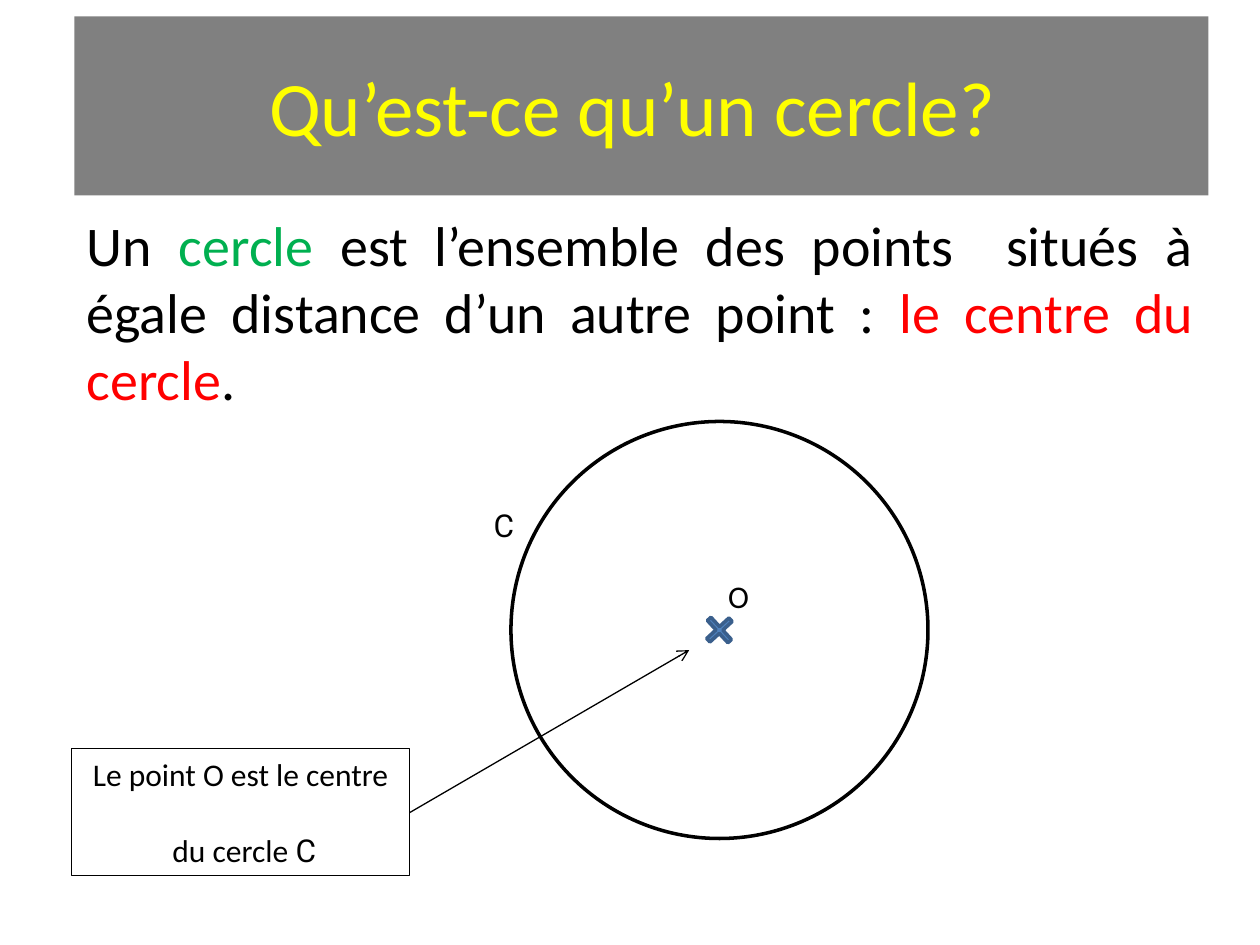
from lxml.etree import SubElement as Sub
from pptx import Presentation
from pptx.dml.color import RGBColor as RGB
from pptx.enum.shapes import MSO_CONNECTOR as Link, MSO_SHAPE as Kind
from pptx.enum.text import MSO_ANCHOR as Anchor, MSO_AUTO_SIZE as Fit, PP_ALIGN as Align
from pptx.oxml.ns import qn
from pptx.util import Inches, Pt

HUES = {"black": "000000", "grey": "808080", "yellow": "FFFF00", "green": "00B050",
        "red": "FF0000", "blue": "4F81BD", "navy": "3A5F8C"}


def hue(name):
    return RGB.from_string(HUES[name])


class Board:
    """Holds the text style and the current slide, and draws on it."""

    font = "Calibri"

    def __init__(self, slide):
        self.slide = slide
        self.shapes = slide.shapes

    def words(self, frame, lines, size=18, align=Align.LEFT, gap=0, font=None):
        frame.word_wrap = True
        for i, runs in enumerate(lines):
            para = frame.paragraphs[0] if i == 0 else frame.add_paragraph()
            para.alignment = align
            para.font.size = Pt(size)
            para.font.name = font or self.font
            para.space_before = Pt(gap if i else 0)
            for text, tint, *face in runs:
                run = para.add_run()
                run.text = text
                run.font.color.rgb = hue(tint)
                if face:
                    run.font.name = face[0]

    def title(self, text, box, fill, tint):
        head = self.shapes.title
        head.left, head.top, head.width, head.height = map(Inches, box)
        head.fill.solid()
        head.fill.fore_color.rgb = hue(fill)
        head.text_frame.vertical_anchor = Anchor.MIDDLE
        self.words(head.text_frame, [[(text, tint)]], 44, Align.CENTER)

    def text(self, lines, box, **style):
        area = self.shapes.add_textbox(*map(Inches, box))
        self.words(area.text_frame, lines, **style)
        area.text_frame.auto_size = Fit.SHAPE_TO_FIT_TEXT
        return area

    def edge(self, item, tint="black", width=0.75):
        item.line.color.rgb = hue(tint)
        item.line.width = Pt(width)

    def shape(self, kind, box, fill=None, tint="black", width=2):
        item = self.shapes.add_shape(kind, *map(Inches, box))
        item.shadow.inherit = False
        if fill:
            item.fill.solid()
            item.fill.fore_color.rgb = hue(fill)
        else:
            item.fill.background()
        self.edge(item, tint, width)
        return item

    def arrow(self, start, end):
        line = self.shapes.add_connector(Link.STRAIGHT, *map(Inches, start + end))
        self.edge(line)
        props = line._element.spPr
        Sub(props.find(qn("a:ln")), qn("a:tailEnd"), type="arrow")
        Sub(props, qn("a:effectLst"))


def main():
    deck = Presentation()
    deck.slide_width, deck.slide_height = Inches(10), Inches(7.5)
    board = Board(deck.slides.add_slide(deck.slide_layouts[5]))

    board.title("Qu’est-ce qu’un cercle? ", (0.59, 0.13, 9, 1.42), "grey", "yellow")
    board.text([[("Un ", "black"), ("cercle ", "green"),
                 ("est l’ensemble des points  situés à égale distance d’un autre point : ", "black"),
                 ("le centre du cercle", "red"), (".", "black")]],
               (0.59, 1.62, 8.98, 1.72), size=32, align=Align.JUSTIFY)

    mid, centre, radius, arm = 5.71, 5, 1.655, 0.12
    for kind, half, fill, tint in ((Kind.OVAL, radius, None, "black"),
                                   (Kind.CROSS, arm, "blue", "navy")):
        mark = board.shape(kind, (mid - half, centre - half, 2 * half, 2 * half), fill, tint)
    mark.rotation = 317.3
    mark.adjustments[0] = 0.42

    board.text([[("O", "black")]], (5.68, 4.53, 0.39, 0.4))
    note = board.text([[("Le point O est le centre", "black")],
                       [(" du cercle ", "black"), ("C", "black", "Roboto")]],
                      (0.57, 5.94, 2.68, 1.01), align=Align.CENTER, gap=22)
    board.edge(note)
    board.arrow((3.25, 6.45), (5.47, 5.16))
    board.text([[("C", "black")]], (3.82, 3.97, 0.9, 0.4), font="Roboto")

    deck.save("out.pptx")


if __name__ == "__main__":
    main()
